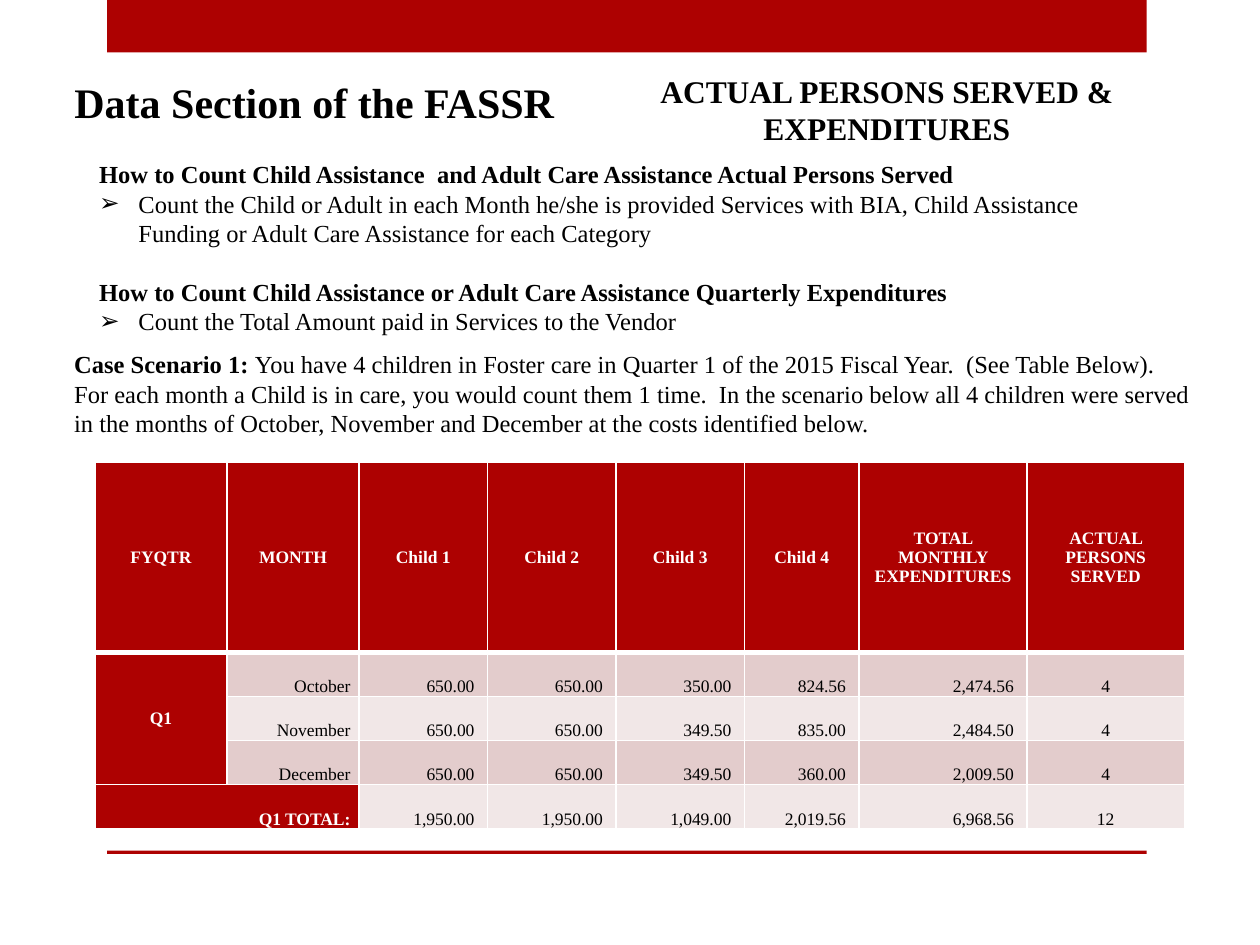
from lxml.etree import SubElement
from pptx import Presentation
from pptx.dml.color import RGBColor
from pptx.enum.shapes import MSO_SHAPE as Shape
from pptx.enum.text import MSO_ANCHOR as Anchor, MSO_AUTO_SIZE as AutoSize, PP_ALIGN as Align
from pptx.oxml.ns import qn
from pptx.util import Pt

RED, WHITE, BLACK = "AD0101", "FFFFFF", "000000"
DARK_BAND, LIGHT_BAND = "E3CCCC", "F1E7E7"
FONT = "Times New Roman"
LINE = 16.8

GUIDANCE = [
    ("How to Count Child Assistance  and Adult Care Assistance Actual Persons Served",
     "Count the Child or Adult in each Month he/she is provided Services with BIA, "
     "Child Assistance Funding or Adult Care Assistance for each Category"),
    ("How to Count Child Assistance or Adult Care Assistance Quarterly Expenditures",
     "Count the Total Amount paid in Services to the Vendor"),
]
SCENARIO = (
    "You have 4 children in Foster care in Quarter 1 of the 2015 Fiscal Year.  "
    "(See Table Below).  For each month a Child is in care, you would count them 1 time.  "
    "In the scenario below all 4 children were served in the months of October, November "
    "and December at the costs identified below."
)
COSTS = [
    ["FYQTR", "MONTH", "Child 1", "Child 2", "Child 3", "Child 4",
     "TOTAL MONTHLY EXPENDITURES", "ACTUAL PERSONS SERVED"],
    ["Q1", "October", "650.00", "650.00", "350.00", "824.56", "2,474.56", "4"],
    ["", "November", "650.00", "650.00", "349.50", "835.00", "2,484.50", "4"],
    ["", "December", "650.00", "650.00", "349.50", "360.00", "2,009.50", "4"],
    ["Q1 TOTAL:", "", "1,950.00", "1,950.00", "1,049.00", "2,019.56", "6,968.56", "12"],
]
COLUMN_WIDTHS = [75.5, 75.5, 73.4, 73.4, 73.4, 65.5, 96, 90]
ROW_HEIGHTS = [108.5] + [25.2] * 4


def color(hex_text):
    return RGBColor.from_string(hex_text)


def apply(target, values):
    for name, value in values.items():
        setattr(target, name, value)


def place(part, box):
    apply(part, dict(zip(("left", "top", "width", "height"), map(Pt, box))))


def write(paragraph, text, size, bold=False, ink=BLACK):
    run = paragraph.add_run()
    run.text = text
    apply(run.font, {"name": FONT, "size": Pt(size), "bold": bold})
    run.font.color.rgb = color(ink)


def add_text_area(slide, box):
    area = slide.shapes.add_textbox(*map(Pt, box))
    apply(area.text_frame, {"word_wrap": True, "auto_size": AutoSize.NONE})
    return area.text_frame.paragraphs[0]


def add_band(slide, box):
    band = slide.shapes.add_shape(Shape.RECTANGLE, *map(Pt, box))
    band.shadow.inherit = False
    band.fill.solid()
    band.fill.fore_color.rgb = color(RED)
    band.line.fill.background()


def add_frame(slide, box):
    left, top, width, height = box
    add_band(slide, (left, top, width, 30))
    add_band(slide, (left, top + height - 2, width, 2))


def add_heading(slide, box):
    left, top, width, height = box
    title = slide.shapes.title
    place(title, (left, top, 301, height))
    apply(title.text_frame, {"auto_size": AutoSize.NONE, "vertical_anchor": Anchor.MIDDLE})
    name = title.text_frame.paragraphs[0]
    name.alignment = Align.LEFT
    write(name, "Data Section of the FASSR", 24, True)
    topic = add_text_area(slide, (left + width - 294, top + 9.4, 294, 51))
    topic.alignment = Align.CENTER
    write(topic, "ACTUAL PERSONS SERVED & EXPENDITURES", 18, True)


def set_bullet(paragraph, mark=None, indent=0):
    properties = paragraph._p.get_or_add_pPr()
    properties.set("marL", str(Pt(indent)))
    properties.set("indent", str(-Pt(indent)))
    if mark:
        SubElement(properties, qn("a:buChar"), char=mark)
    else:
        SubElement(properties, qn("a:buNone"))


def add_guidance(slide, box):
    body = slide.placeholders[1]
    place(body, box)
    frame = body.text_frame
    apply(frame, {"auto_size": AutoSize.NONE, "word_wrap": True})
    for number, (question, answer) in enumerate(GUIDANCE):
        heading = frame.add_paragraph() if number else frame.paragraphs[0]
        heading.space_before = Pt(LINE * number)
        set_bullet(heading)
        write(heading, question, 14, True)
        step = frame.add_paragraph()
        step.space_before = Pt(0)
        set_bullet(step, "➢", 22.5)
        write(step, answer, 14)


def add_scenario(slide, box):
    case = add_text_area(slide, box)
    write(case, "Case Scenario 1: ", 14, True)
    write(case, SCENARIO, 14)


def set_borders(cell, widths):
    properties = cell._tc.get_or_add_tcPr()
    for side, width in zip("LRTB", widths):
        edge = SubElement(properties, qn(f"a:ln{side}"), w=str(Pt(width)))
        SubElement(SubElement(edge, qn("a:solidFill")), qn("a:srgbClr"), val=WHITE)


def format_cell(cell, text, row, column):
    header = row == 0
    label = header or column == 0
    amount = row > 0 and 2 <= column <= 6
    centered = header or column == 7 or text == "Q1"
    set_borders(cell, (1, 1, 3 if row == 1 else 1, 3 if header else 1))
    apply(cell, {
        "margin_left": Pt(5),
        "margin_right": Pt(7.5 if amount else 5),
        "margin_top": 0,
        "margin_bottom": 0,
        "vertical_anchor": Anchor.MIDDLE if header or text == "Q1" else Anchor.BOTTOM,
    })
    cell.fill.solid()
    cell.fill.fore_color.rgb = color(RED if label else DARK_BAND if row % 2 else LIGHT_BAND)
    paragraph = cell.text_frame.paragraphs[0]
    paragraph.alignment = Align.CENTER if centered else Align.RIGHT
    if text:
        write(paragraph, text, 10, label, WHITE if label else BLACK)
    else:
        paragraph.font.size = Pt(10)


def add_costs(slide, box):
    table = slide.shapes.add_table(len(COSTS), len(COSTS[0]), *map(Pt, box)).table
    for column, width in zip(table.columns, COLUMN_WIDTHS):
        column.width = Pt(width)
    for row, height in zip(table.rows, ROW_HEIGHTS):
        row.height = Pt(height)
    for row, texts in enumerate(COSTS):
        for column, text in enumerate(texts):
            format_cell(table.cell(row, column), text, row, column)
    table.cell(1, 0).merge(table.cell(3, 0))
    table.cell(4, 0).merge(table.cell(4, 1))


def main():
    deck = Presentation()
    apply(deck, {"slide_width": Pt(720), "slide_height": Pt(540)})
    slide = deck.slides.add_slide(deck.slide_layouts[1])
    add_frame(slide, (61.2, 0, 594, 488))
    add_heading(slide, (35.3, 28, 618.5, 60))
    add_guidance(slide, (49.4, 87.4, 576, 109))
    add_scenario(slide, (35.3, 196, 654.5, 58))
    add_costs(slide, (54.2, 264.3, sum(COLUMN_WIDTHS), sum(ROW_HEIGHTS)))
    deck.save("out.pptx")


if __name__ == "__main__":
    main()
